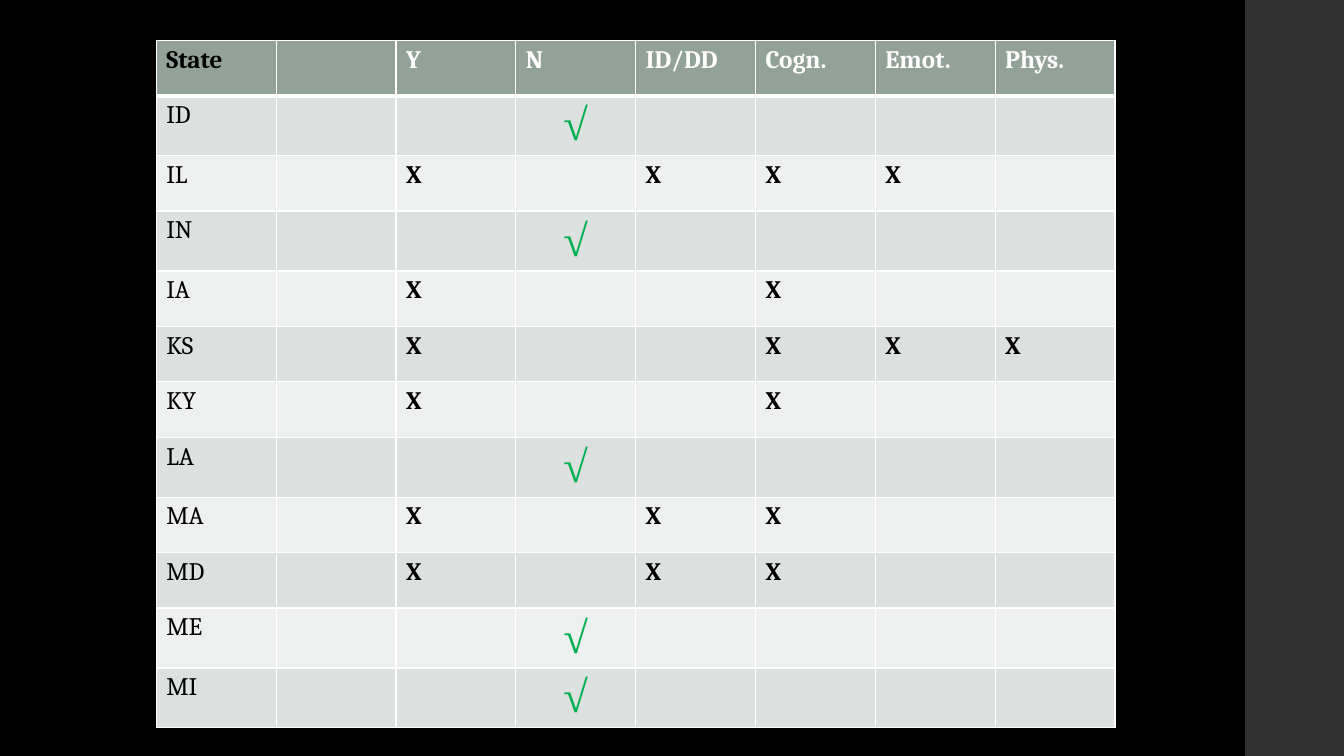
import lxml.etree
import pptx
import pptx.dml.color
import pptx.enum.shapes
import pptx.enum.text
import pptx.oxml.ns
import pptx.util

Inches = pptx.util.Inches
RGBColor = pptx.dml.color.RGBColor

BLACK = RGBColor(0x00, 0x00, 0x00)
WHITE = RGBColor(0xFF, 0xFF, 0xFF)
GREEN = RGBColor(0x00, 0xB0, 0x50)
SIDEBAR = RGBColor(0x30, 0x30, 0x30)
HEADER = RGBColor(0x93, 0xA2, 0x99)
BAND_DARK = RGBColor(0xDC, 0xE0, 0xDE)
BAND_LIGHT = RGBColor(0xEE, 0xF0, 0xEF)

COLUMNS = ["State", "", "Y", "N", "ID/DD", "Cogn.", "Emot.", "Phys."]
STATES = {
    "ID": ["N"],
    "IL": ["Y", "ID/DD", "Cogn.", "Emot."],
    "IN": ["N"],
    "IA": ["Y", "Cogn."],
    "KS": ["Y", "Cogn.", "Emot.", "Phys."],
    "KY": ["Y", "Cogn."],
    "LA": ["N"],
    "MA": ["Y", "ID/DD", "Cogn."],
    "MD": ["Y", "ID/DD", "Cogn."],
    "ME": ["N"],
    "MI": ["N"],
}


def add_sidebar(slide, left, top, width, height):
    """Draw the grey strip at the right edge."""
    s = slide.shapes.add_shape(
        pptx.enum.shapes.MSO_SHAPE.RECTANGLE, left, top, width, height)
    s.shadow.inherit = False
    s.fill.solid()
    s.fill.fore_color.rgb = SIDEBAR
    s.line.fill.background()


def set_borders(cell, top, bottom):
    """Give the cell white borders, with top and bottom widths in points."""
    qn = pptx.oxml.ns.qn
    tc_pr = cell._tc.get_or_add_tcPr()
    for side, width in (("L", 1), ("R", 1), ("T", top), ("B", bottom)):
        ln = lxml.etree.SubElement(
            tc_pr, qn("a:ln" + side), w=str(pptx.util.Pt(width)))
        fill = lxml.etree.SubElement(ln, qn("a:solidFill"))
        lxml.etree.SubElement(fill, qn("a:srgbClr"), val=str(WHITE))


def write_cell(cell, text, color, bold):
    """Write the text of one cell, with check marks large, green and centred."""
    p = cell.text_frame.paragraphs[0]
    r = p.add_run()
    r.text = text
    check = text == "√"
    if check:
        p.alignment = pptx.enum.text.PP_ALIGN.CENTER
    r.font.name = "Times New Roman" if check else "Cambria"
    r.font.size = pptx.util.Pt(32 if check else 18)
    r.font.bold = bold
    r.font.color.rgb = GREEN if check else color


def state_row(state, marked):
    """Return the cell texts for one state."""
    marks = ["" if c not in marked else "√" if c == "N" else "X"
             for c in COLUMNS[1:]]
    return [state] + marks


def add_state_table(slide, left, top, width, height):
    """Build the table of states in the given box."""
    rows = [COLUMNS] + [state_row(*item) for item in STATES.items()]
    table = slide.shapes.add_table(
        len(rows), len(COLUMNS), left, top, width, height).table
    for i, row in enumerate(rows):
        band = HEADER if i == 0 else BAND_DARK if i % 2 else BAND_LIGHT
        for j, text in enumerate(row):
            cell = table.cell(i, j)
            set_borders(cell, 3 if i == 1 else 1, 3 if i == 0 else 1)
            cell.fill.solid()
            cell.fill.fore_color.rgb = band
            if text:
                color = WHITE if i == 0 and j > 0 else BLACK
                write_cell(cell, text, color, i == 0 or j > 0)


def main():
    """Build the slide and save it."""
    prs = pptx.Presentation()
    prs.slide_width = Inches(13.33)
    prs.slide_height = Inches(7.5)
    slide = prs.slides.add_slide(prs.slide_layouts[6])
    slide.background.fill.solid()
    slide.background.fill.fore_color.rgb = BLACK
    add_sidebar(slide, Inches(12.35), 0, Inches(0.98), prs.slide_height)
    add_state_table(slide, Inches(1.55), Inches(0.4), Inches(9.51), Inches(6.6))
    prs.save("out.pptx")


if __name__ == "__main__":
    main()
